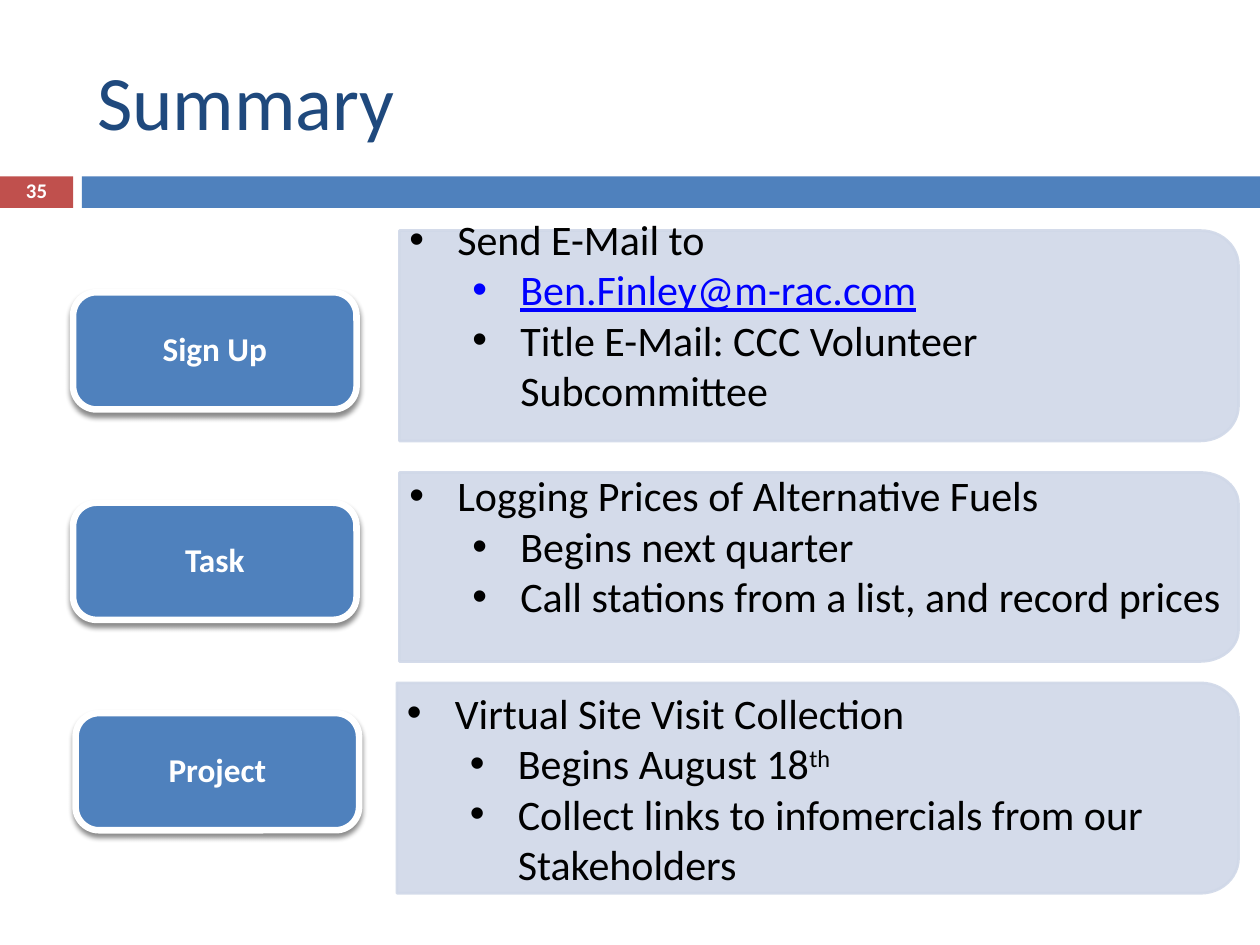
"""Build the summary slide with three labelled panels of bullet points."""
from dataclasses import dataclass
from math import cos, pi, sin

from lxml.etree import SubElement
from pptx import Presentation
from pptx.dml.color import RGBColor
from pptx.enum.shapes import MSO_SHAPE
from pptx.enum.text import MSO_ANCHOR, PP_ALIGN
from pptx.oxml.ns import qn
from pptx.util import Inches, Pt

FONT = "Calibri"
BLUE = RGBColor(0x4F, 0x81, 0xBD)
RED = RGBColor(0xC0, 0x50, 0x4D)
NAVY = RGBColor(0x1F, 0x49, 0x7D)
PANEL = RGBColor(0xD0, 0xD8, 0xE8)
LINK = RGBColor(0x00, 0x00, 0xFF)
BLACK = RGBColor(0x00, 0x00, 0x00)
WHITE = RGBColor(0xFF, 0xFF, 0xFF)


@dataclass
class Point:
    text: str
    level: int = 1
    superscript: str = ""
    link: bool = False


@dataclass
class Topic:
    label: str
    label_left: float
    label_top: float
    left: float
    top: float
    height: float
    points: list[Point]
    bottom_inset: float = 0.44


TOPICS = [
    Topic("Sign Up", 0.58, 2.32, 3.17, 1.83, 1.67, [
        Point("Send E-Mail to", level=0),
        Point("Ben.Finley@m-rac.com", link=True),
        Point("Title E-Mail: CCC Volunteer Subcommittee"),
    ]),
    Topic("Task", 0.58, 3.99, 3.17, 3.75, 1.5, [
        Point("Logging Prices of Alternative Fuels", level=0),
        Point("Begins next quarter"),
        Point("Call stations from a list, and record prices"),
    ]),
    Topic("Project", 0.6, 5.66, 3.15, 5.42, 1.67, [
        Point("Virtual Site Visit Collection", level=0),
        Point("Begins August 18", superscript="th"),
        Point("Collect links to infomercials from our Stakeholders"),
    ], bottom_inset=0.1),
]


def style_font(paragraph, size: float, color: RGBColor, bold: bool = False) -> None:
    font = paragraph.font
    font.name, font.size, font.bold = FONT, Pt(size), bold
    font.color.rgb = color


def set_insets(frame, left: float, top: float, right: float, bottom: float) -> None:
    frame.margin_left, frame.margin_top = Inches(left), Inches(top)
    frame.margin_right, frame.margin_bottom = Inches(right), Inches(bottom)
    frame.vertical_anchor = MSO_ANCHOR.MIDDLE
    frame.word_wrap = True


def add_band(slide, left: float, width: float, color: RGBColor):
    band = slide.shapes.add_shape(
        MSO_SHAPE.RECTANGLE, Inches(left), Inches(1.4), Inches(width), Inches(0.25))
    band.shadow.inherit = False
    band.fill.solid()
    band.fill.fore_color.rgb = color
    band.line.fill.background()
    return band


def add_point(paragraph, point: Point) -> None:
    paragraph.alignment = PP_ALIGN.LEFT
    paragraph.level = point.level
    properties = paragraph._p.get_or_add_pPr()
    properties.set("marL", str(Inches(0.38 + 0.5 * point.level)))
    properties.set("indent", str(Inches(-0.38)))
    SubElement(properties, qn("a:buFont"), typeface="Arial")
    SubElement(properties, qn("a:buChar"), char="•")
    style_font(paragraph, 24, LINK if point.link else BLACK)
    paragraph.font.underline = point.link
    paragraph.add_run().text = point.text
    if point.superscript:
        raised = paragraph.add_run()
        raised.text = point.superscript
        raised._r.get_or_add_rPr().set("baseline", "30000")


def add_panel(slide, topic: Topic) -> None:
    right, bottom = 9.83, topic.top + topic.height
    radius_x, radius_y = 0.3, topic.height / 6
    steps = 12
    angles = [pi / 2 * step / steps for step in range(steps + 1)]
    upper = [(right - radius_x * (1 - sin(a)), topic.top + radius_y * (1 - cos(a)))
             for a in angles]
    lower = [(x, topic.top + bottom - y) for x, y in reversed(upper)]
    outline = upper + lower + [(topic.left, bottom)]
    builder = slide.shapes.build_freeform(Inches(topic.left), Inches(topic.top))
    builder.add_line_segments([(Inches(x), Inches(y)) for x, y in outline], close=True)
    panel = builder.convert_to_shape()
    panel.shadow.inherit = False
    panel.line.width = Pt(1.5)
    for fill in (panel.fill, panel.line.fill):
        fill.solid()
        fill.fore_color.rgb = PANEL
    for color in panel._element.spPr.iter(qn("a:srgbClr")):
        SubElement(color, qn("a:alpha"), val="90000")
    frame = panel.text_frame
    set_insets(frame, 0.08, 0.1, 0.14, topic.bottom_inset)
    for index, point in enumerate(topic.points):
        add_point(frame.add_paragraph() if index else frame.paragraphs[0], point)


def add_label(slide, topic: Topic) -> None:
    label = slide.shapes.add_shape(
        MSO_SHAPE.ROUNDED_RECTANGLE, Inches(topic.label_left), Inches(topic.label_top),
        Inches(2.25), Inches(0.93))
    label.adjustments[0] = 0.2
    label.fill.solid()
    label.fill.fore_color.rgb = BLUE
    label.line.color.rgb = WHITE
    label.line.width = Pt(3.75)
    label.shadow.inherit = False
    effects = label._element.spPr.find(qn("a:effectLst"))
    shadow = SubElement(effects, qn("a:outerShdw"), blurRad=str(Pt(3)),
                        dist=str(Pt(2.4)), dir="5400000", rotWithShape="0")
    color = SubElement(shadow, qn("a:srgbClr"), val=str(BLACK))
    SubElement(color, qn("a:alpha"), val="45000")
    set_insets(label.text_frame, 0.15, 0.11, 0.15, 0.11)
    paragraph = label.text_frame.paragraphs[0]
    paragraph.text = topic.label
    paragraph.alignment = PP_ALIGN.CENTER
    paragraph.line_spacing = 0.9
    style_font(paragraph, 19, WHITE, bold=True)


def add_title(slide) -> None:
    title = slide.shapes.title
    title.left, title.top = Inches(0.67), Inches(0.25)
    title.width, title.height = Inches(8.92), Inches(1.08)
    title.text_frame.vertical_anchor = MSO_ANCHOR.MIDDLE
    heading = title.text_frame.paragraphs[0]
    heading.text = "Summary"
    heading.alignment = PP_ALIGN.LEFT
    style_font(heading, 44, NAVY)


def add_page_number(slide) -> None:
    marker = add_band(slide, 0, 0.58, RED)
    set_insets(marker.text_frame, 0, 0, 0, 0)
    number = marker.text_frame.paragraphs[0]
    number.text = "35"
    number.alignment = PP_ALIGN.CENTER
    number.line_spacing = 0.8
    style_font(number, 11.9, WHITE, bold=True)


def main() -> None:
    presentation = Presentation()
    presentation.slide_width, presentation.slide_height = Inches(10), Inches(7.5)
    slide = presentation.slides.add_slide(presentation.slide_layouts[5])
    add_title(slide)
    add_page_number(slide)
    add_band(slide, 0.65, 9.35, BLUE)
    for topic in TOPICS:
        add_panel(slide, topic)
        add_label(slide, topic)
    presentation.save("out.pptx")


if __name__ == "__main__":
    main()
